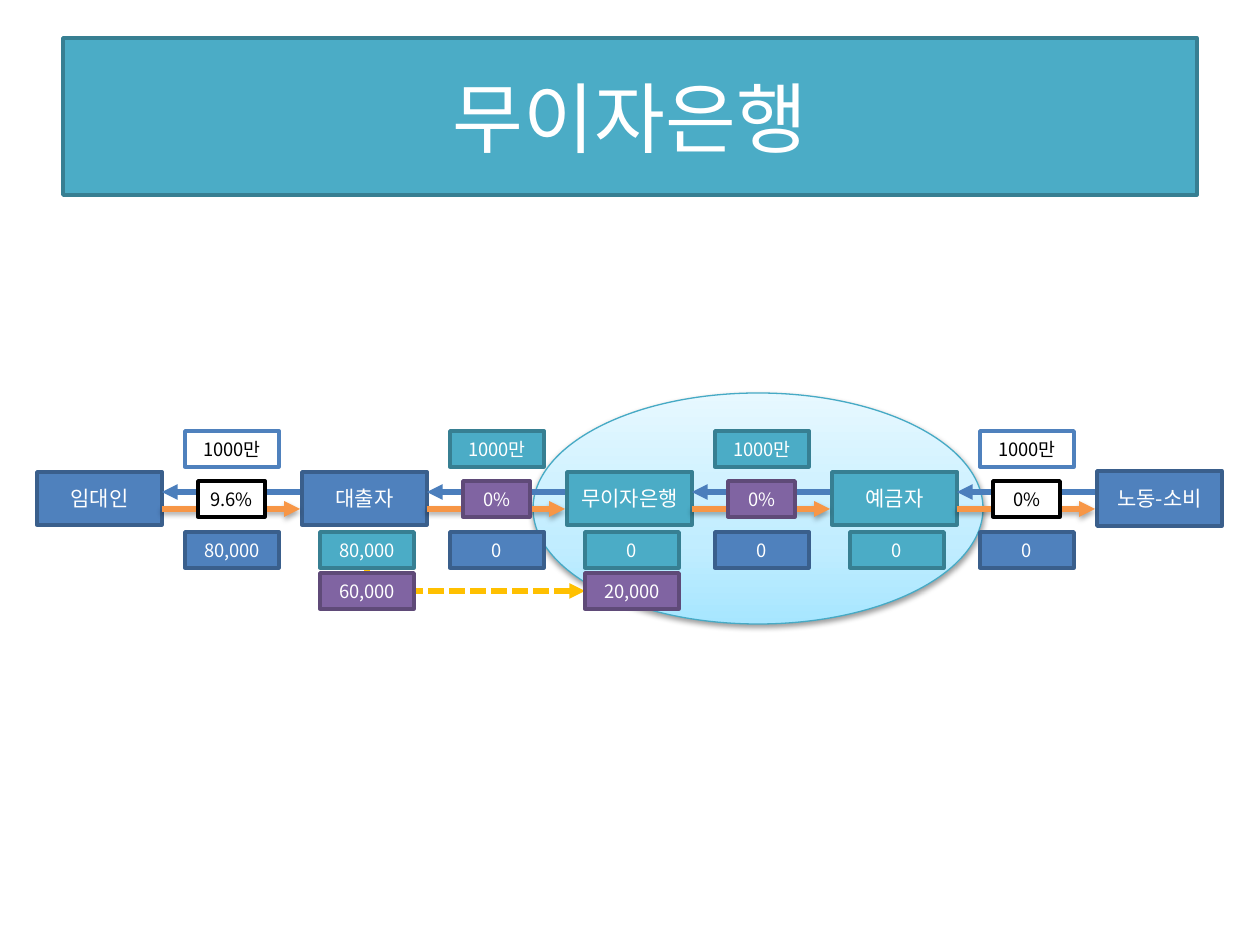
from typing import NamedTuple

from lxml.etree import SubElement
from pptx import Presentation
from pptx.dml.color import RGBColor
from pptx.enum.dml import MSO_LINE
from pptx.enum.shapes import MSO_CONNECTOR as CONN, MSO_SHAPE as SHAPE
from pptx.enum.text import MSO_ANCHOR as ANCHOR, PP_ALIGN as ALIGN
from pptx.oxml.ns import qn
from pptx.util import Emu, Pt

FONT = "Noto Sans CJK KR"
WHITE = RGBColor(0xFF, 0xFF, 0xFF)
BLACK = RGBColor(0x00, 0x00, 0x00)
BLUE = RGBColor(0x4F, 0x81, 0xBD)
BLUE_EDGE = RGBColor(0x3A, 0x5F, 0x8C)
BLUE_ARROW = RGBColor(0x4B, 0x7E, 0xBC)
TEAL = RGBColor(0x4B, 0xAC, 0xC6)
TEAL_EDGE = RGBColor(0x37, 0x7F, 0x92)
OVAL_EDGE = RGBColor(0x46, 0xAA, 0xC5)
PURPLE = RGBColor(0x80, 0x64, 0xA2)
PURPLE_EDGE = RGBColor(0x5F, 0x4A, 0x78)
ORANGE = RGBColor(0xF7, 0x96, 0x46)
GOLD = RGBColor(0xFF, 0xC0, 0x00)
OVAL_STOPS = [(0, RGBColor(0xA7, 0xE6, 0xFF)), (35, RGBColor(0xC1, 0xED, 0xFF)),
              (100, RGBColor(0xE7, 0xF8, 0xFF))]


class Style(NamedTuple):
    fill: RGBColor
    line: RGBColor
    text: RGBColor = WHITE


class Node(NamedTuple):
    name: str
    style: Style
    h: int = 53


class Link(NamedTuple):
    amount: str
    amount_style: Style
    rate: str
    rate_style: Style
    interest: str


class Balance(NamedTuple):
    node: int
    y: int
    text: str
    style: Style


S_BLUE = Style(BLUE, BLUE_EDGE)
S_TEAL = Style(TEAL, TEAL_EDGE)
S_PURPLE = Style(PURPLE, PURPLE_EDGE)
S_OPEN = Style(WHITE, BLUE, BLACK)
S_RATE = Style(WHITE, BLACK, BLACK)

NODE_X, PITCH, NODE_Y, NODE_W = 37, 265, 472, 125
CELL_W, CELL_H = 94, 36
AMOUNT_Y, RATE_Y, INTEREST_Y, SHARE_Y = 431, 481, 532, 573
CELL_DX, RATE_DX, RATE_W, BALANCE_DX = 148, 161, 67, 18
LINK_END = 263

NODES = [Node("임대인", S_BLUE), Node("대출자", S_BLUE), Node("무이자은행", S_TEAL),
         Node("예금자", S_TEAL), Node("노동-소비", S_BLUE, 55)]
LINKS = [Link("1000만", S_OPEN, "9.6%", S_RATE, "80,000"),
         Link("1000만", S_TEAL, "0%", S_PURPLE, "0"),
         Link("1000만", S_TEAL, "0%", S_PURPLE, "0"),
         Link("1000만", S_OPEN, "0%", S_RATE, "0")]
BALANCES = [Balance(1, INTEREST_Y, "80,000", S_TEAL),
            Balance(2, INTEREST_Y, "0", S_TEAL),
            Balance(3, INTEREST_Y, "0", S_TEAL),
            Balance(1, SHARE_Y, "60,000", S_PURPLE),
            Balance(2, SHARE_Y, "20,000", S_PURPLE)]


def px(n: float) -> Emu:
    return Emu(round(n * 914400 / 126))


def node_x(i: int) -> int:
    return NODE_X + i * PITCH


def add_shadow(effects, alpha: int, dist: float) -> None:
    shadow = SubElement(effects, qn("a:outerShdw"), blurRad=str(Pt(3.1)),
                        dist=str(Pt(dist)), dir="5400000", rotWithShape="0")
    color = SubElement(shadow, qn("a:srgbClr"), val=str(BLACK))
    SubElement(color, qn("a:alpha"), val=str(alpha * 1000))


def add_box(shapes, x: int, y: int, w: int, h: int, text: str, style: Style, size: float):
    sp = shapes.add_shape(SHAPE.RECTANGLE, px(x), px(y), px(w), px(h))
    sp.shadow.inherit = False
    sp.fill.solid()
    sp.fill.fore_color.rgb = style.fill
    sp.line.color.rgb = style.line
    sp.line.width = Pt(2)
    tf = sp.text_frame
    frame = {"word_wrap": True, "vertical_anchor": ANCHOR.MIDDLE,
             "margin_left": 0, "margin_right": 0}
    for key, value in frame.items():
        setattr(tf, key, value)
    p = tf.paragraphs[0]
    p.alignment = ALIGN.CENTER
    r = p.add_run()
    r.text = text
    for key, value in {"name": FONT, "size": Pt(size)}.items():
        setattr(r.font, key, value)
    r.font.color.rgb = style.text
    SubElement(r.font._element, qn("a:ea"), typeface=FONT)
    return sp


def add_cell(shapes, x: int, y: int, text: str, style: Style, w: int = CELL_W):
    return add_box(shapes, x, y, w, CELL_H, text, style, 10.5)


def add_arrow(shapes, kind, x1: float, y1: float, x2: float, y2: float,
              color: RGBColor, dash=None, shadow: bool = False):
    cn = shapes.add_connector(kind, px(x1), px(y1), px(x2), px(y2))
    cn.line.color.rgb = color
    cn.line.width = Pt(3)
    if dash is not None:
        cn.line.dash_style = dash
    spPr = cn._element.spPr
    SubElement(spPr.find(qn("a:ln")), qn("a:tailEnd"), type="triangle")
    effects = SubElement(spPr, qn("a:effectLst"))
    if shadow:
        add_shadow(effects, 35, 1.8)
    return cn


def add_down_right_arrow(shapes, x1: int, y1: int, x2: int, y2: int) -> None:
    cx, cy = (x1 + x2) / 2, (y1 + y2) / 2
    half_w, half_h = (y2 - y1) / 2, (x2 - x1) / 2
    cn = add_arrow(shapes, CONN.ELBOW, cx + half_w, cy - half_h,
                   cx - half_w, cy + half_h, GOLD, MSO_LINE.SQUARE_DOT)
    spPr = cn._element.spPr
    spPr.find(qn("a:xfrm")).set("rot", "16200000")
    spPr.find(qn("a:prstGeom")).set("prst", "bentConnector2")


def add_oval(shapes, x: int, y: int, w: int, h: int) -> None:
    sp = shapes.add_shape(SHAPE.OVAL, px(x), px(y), px(w), px(h))
    sp.shadow.inherit = False
    sp.line.color.rgb = OVAL_EDGE
    sp.line.width = Pt(0.75)
    sp.fill.gradient()
    spPr = sp._element.spPr
    grad = spPr.find(qn("a:gradFill"))
    stops = grad.find(qn("a:gsLst"))
    for stop in list(stops):
        stops.remove(stop)
    for pos, color in OVAL_STOPS:
        stop = SubElement(stops, qn("a:gs"), pos=str(pos * 1000))
        SubElement(stop, qn("a:srgbClr"), val=str(color))
    grad.find(qn("a:lin")).set("ang", "16200000")
    add_shadow(spPr.find(qn("a:effectLst")), 38, 1.6)


def add_link(shapes, x: int, link: Link) -> None:
    pair = shapes.add_group_shape().shapes
    left, right = x + NODE_W, x + LINK_END
    add_arrow(pair, CONN.STRAIGHT, right, 492, left, 492, BLUE_ARROW)
    add_arrow(pair, CONN.STRAIGHT, left, 509, right, 509, ORANGE, shadow=True)
    add_cell(shapes, x + CELL_DX, AMOUNT_Y, link.amount, link.amount_style)
    add_cell(shapes, x + RATE_DX, RATE_Y, link.rate, link.rate_style, RATE_W)
    add_cell(shapes, x + CELL_DX, INTEREST_Y, link.interest, S_BLUE)


def main() -> None:
    prs = Presentation()
    prs.slide_width, prs.slide_height = px(1260), px(945)
    shapes = prs.slides.add_slide(prs.slide_layouts[6]).shapes
    add_oval(shapes, 533, 393, 450, 231)
    add_down_right_arrow(shapes, node_x(1) + BALANCE_DX + CELL_W // 2, INTEREST_Y + CELL_H,
                         node_x(2) + BALANCE_DX, SHARE_Y + CELL_H // 2)
    for i, node in enumerate(NODES):
        add_box(shapes, node_x(i), NODE_Y - (node.h - 53) // 2, NODE_W, node.h,
                node.name, node.style, 12)
    for i, link in enumerate(LINKS):
        add_link(shapes, node_x(i), link)
    for b in BALANCES:
        add_cell(shapes, node_x(b.node) + BALANCE_DX, b.y, b.text, b.style)
    add_box(shapes, 63, 38, 1134, 157, "무이자은행", S_TEAL, 44)
    prs.save("out.pptx")


if __name__ == "__main__":
    main()
